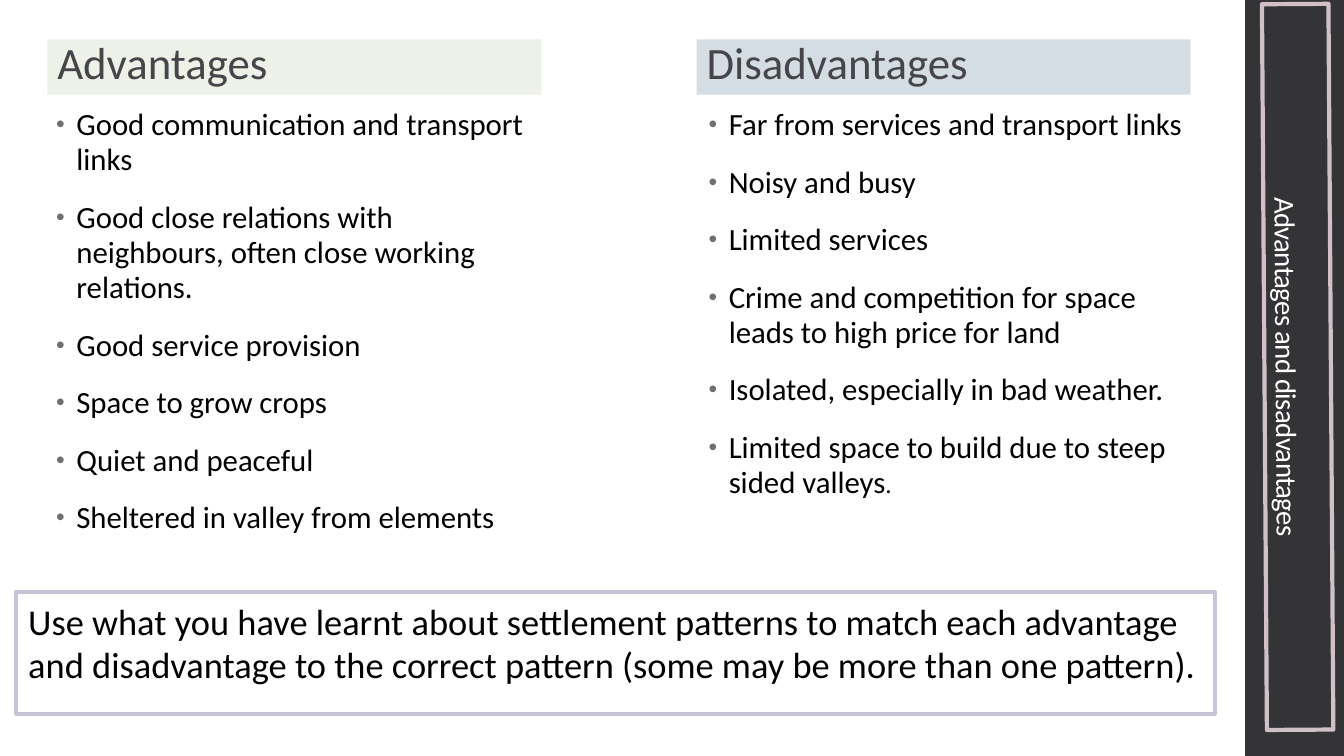
from lxml import etree
from pptx import Presentation
from pptx.dml.color import RGBColor
from pptx.enum.shapes import MSO_SHAPE
from pptx.enum.text import MSO_ANCHOR as Anchor, PP_ALIGN as Align
from pptx.oxml.ns import qn
from pptx.util import Inches, Pt

FONT = "Calibri"
ADVANTAGES = [
    "Good communication and transport links",
    "Good close relations with neighbours, often close working relations.",
    "Good service provision",
    "Space to grow crops",
    "Quiet and peaceful",
    "Sheltered in valley from elements",
]
DISADVANTAGES = [
    "Far from services and transport links",
    "Noisy and busy",
    "Limited services",
    "Crime and competition for space leads to high price for land",
    "Isolated, especially in bad weather.",
    "Limited space to build due to steep sided valleys",
]
TASK = (
    "Use what you have learnt about settlement patterns to match each advantage "
    "and disadvantage to the correct pattern (some may be more than one pattern)."
)


def rgb(color):
    return RGBColor.from_string(color)


def add_box(slide, left, top, width, height, fill=None, line=None, line_width=3):
    box = slide.shapes.add_shape(
        MSO_SHAPE.RECTANGLE, Inches(left), Inches(top), Inches(width), Inches(height)
    )
    box.shadow.inherit = False
    if fill:
        box.fill.solid()
        box.fill.fore_color.rgb = rgb(fill)
    else:
        box.fill.background()
    if line:
        box.line.color.rgb = rgb(line)
        box.line.width = Pt(line_width)
    else:
        box.line.fill.background()
    return box


def set_up_frame(frame, anchor=Anchor.TOP, inset_x=0.1, inset_y=0.05):
    frame.word_wrap = True
    frame.vertical_anchor = anchor
    frame.margin_left = frame.margin_right = Inches(inset_x)
    frame.margin_top = frame.margin_bottom = Inches(inset_y)


def write(paragraph, text, size, color="000000", align=Align.LEFT,
          line_spacing=None, before=None, after=None):
    """Add a formatted run to the paragraph and return it."""
    paragraph.alignment = align
    if line_spacing:
        paragraph.line_spacing = line_spacing
    if before is not None:
        paragraph.space_before = Pt(before)
    if after is not None:
        paragraph.space_after = Pt(after)
    run = paragraph.add_run()
    run.text = text
    run.font.name = FONT
    run.font.size = Pt(size)
    run.font.color.rgb = rgb(color)
    return run


def add_bullet(paragraph):
    props = paragraph._p.get_or_add_pPr()
    props.set("marL", str(Inches(0.2)))
    props.set("indent", str(-Inches(0.2)))
    bullet_color = etree.SubElement(props, qn("a:buClr"))
    etree.SubElement(bullet_color, qn("a:srgbClr"), val="6F6F74")
    etree.SubElement(props, qn("a:buSzPct"), val="80000")
    etree.SubElement(props, qn("a:buFont"), typeface="Arial")
    etree.SubElement(props, qn("a:buChar"), char="•")


def add_heading(slide, text, left, fill):
    frame = add_box(slide, left, 0.39, 4.9, 0.55, fill=fill).text_frame
    set_up_frame(frame, Anchor.BOTTOM)
    write(frame.paragraphs[0], text, 32, "46464A", line_spacing=0.95, after=2)


def add_points(slide, points, left, height):
    """Add a bulleted column and return its last paragraph."""
    frame = slide.shapes.add_textbox(
        Inches(left), Inches(1.02), Inches(4.9), Inches(height)
    ).text_frame
    set_up_frame(frame)
    for index, point in enumerate(points):
        paragraph = frame.add_paragraph() if index else frame.paragraphs[0]
        add_bullet(paragraph)
        write(paragraph, point, 22, line_spacing=0.95,
              before=14 if index else 0, after=2)
    return paragraph


def add_side_title(slide):
    add_box(slide, 12.35, 0, 1, 7.5, fill="343437")
    title = add_box(slide, 9.27, 3.31, 7.2, 0.66, line="D2C0C7")
    title.rotation = 89.6
    set_up_frame(title.text_frame, Anchor.BOTTOM)
    run = write(title.text_frame.paragraphs[0], "Advantages and disadvantages",
                20.7, "FFFFFF", align=Align.CENTER, line_spacing=0.9)
    run.font._element.set("spc", "-50")


def add_task(slide):
    frame = add_box(slide, 0.16, 5.87, 11.89, 1.21,
                    line="C6C5D7", line_width=2.83).text_frame
    set_up_frame(frame, inset_x=0.12, inset_y=0.07)
    write(frame.paragraphs[0], TASK, 26)


def main():
    deck = Presentation()
    deck.slide_width, deck.slide_height = Inches(13.33), Inches(7.5)
    slide = deck.slides.add_slide(deck.slide_layouts[6])
    add_side_title(slide)
    add_heading(slide, "Advantages", 0.47, "EDF1E7")
    add_points(slide, ADVANTAGES, 0.46, 4.33)
    add_heading(slide, "Disadvantages", 6.91, "D3DDE3")
    last_point = add_points(slide, DISADVANTAGES, 6.93, 4.01)
    write(last_point, ".", 18)
    add_task(slide)
    deck.save("out.pptx")


if __name__ == "__main__":
    main()
